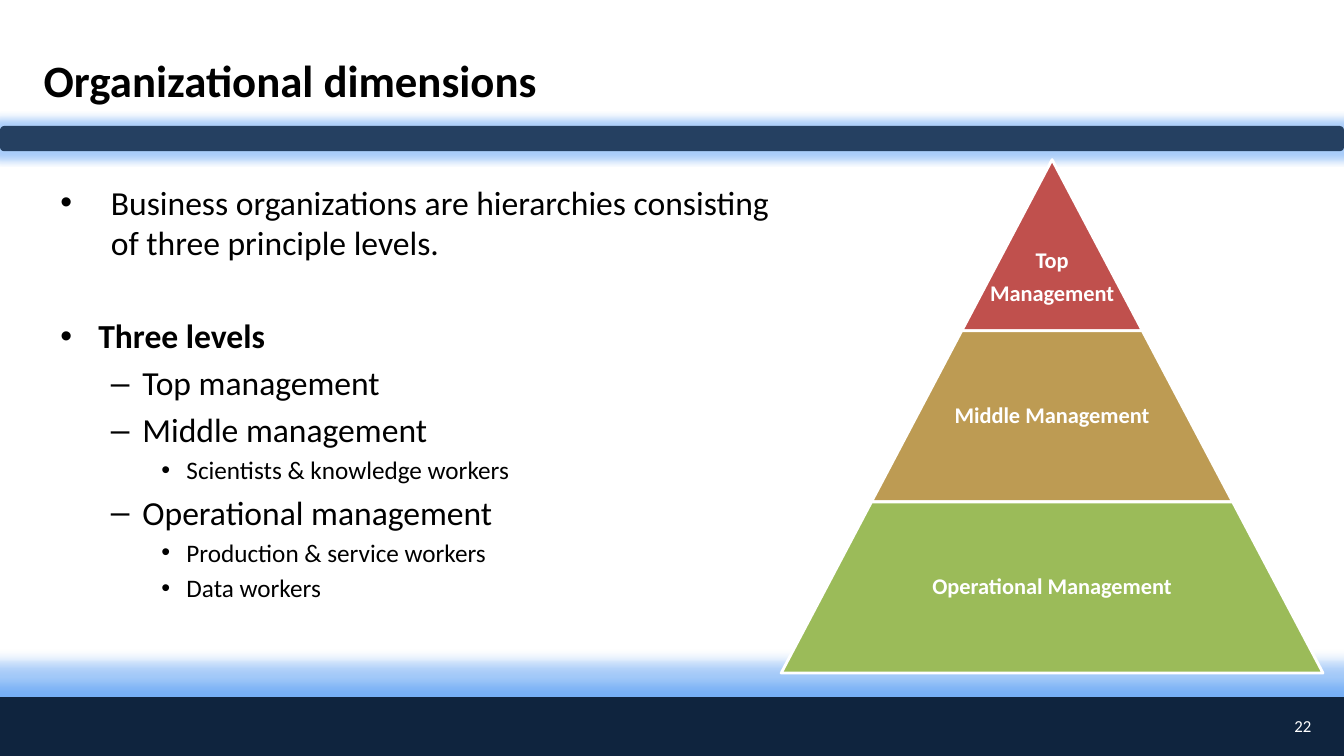
from lxml import etree
from pptx import Presentation
from pptx.dml.color import RGBColor
from pptx.enum.shapes import MSO_SHAPE
from pptx.enum.text import MSO_ANCHOR, MSO_AUTO_SIZE, PP_ALIGN
from pptx.oxml.ns import qn
from pptx.util import Pt

RECTANGLE = MSO_SHAPE.RECTANGLE
ROUNDED = MSO_SHAPE.ROUNDED_RECTANGLE
TRAPEZOID = MSO_SHAPE.TRAPEZOID
MIDDLE = MSO_ANCHOR.MIDDLE
LEFT, CENTER, RIGHT = PP_ALIGN.LEFT, PP_ALIGN.CENTER, PP_ALIGN.RIGHT

FONT = "Calibri"
BLACK, WHITE = "000000", "FFFFFF"
GLOW = "2A82F0"

# Level: (left margin px, hanging indent px, size pt)
LEVELS = [(36, 36, 24), (78, 30, 24), (120, 24, 18)]

# (level, text)
OUTLINE = [
    (0, "Business organizations are hierarchies consisting of three principle levels."),
    (0, "Three levels"),
    (1, "Top management"),
    (1, "Middle management"),
    (2, "Scientists & knowledge workers"),
    (1, "Operational management"),
    (2, "Production & service workers"),
    (2, "Data workers"),
]

# (lines, fill, top inset px)
TIERS = [
    (["Top", "Management"], "C0504D", 64),
    (["Middle Management"], "BD9B53", 2),
    (["Operational Management"], "9BBB59", 2),
]
APEX_X, APEX_Y = 1002, 152
TIER_HEIGHT, TIER_STEP = 163, 86


def px(length):
    return length * 9525


def color(value):
    return RGBColor.from_string(value)


def add_span(para, text, size, ink, bold=False):
    span = para.add_run()
    span.text = text
    span.font.name = FONT
    span.font.size = Pt(size)
    span.font.bold = bold
    span.font.color.rgb = color(ink)


def place(box, left, top, width, height):
    box.left, box.top = px(left), px(top)
    box.width, box.height = px(width), px(height)


def add_block(page, kind, left, top, width, height, fill):
    block = page.shapes.add_shape(kind, px(left), px(top), px(width), px(height))
    block.shadow.inherit = False
    block.fill.solid()
    block.fill.fore_color.rgb = color(fill)
    block.line.fill.background()
    return block


def add_glowing_bar(page, kind, top, height, fill, radius):
    bar = add_block(page, kind, 0, top, 1280, height, fill)
    effects = bar._element.spPr.find(qn("a:effectLst"))
    glow = etree.SubElement(effects, qn("a:glow"), rad=str(Pt(radius)))
    tint = etree.SubElement(glow, qn("a:srgbClr"), val=GLOW)
    etree.SubElement(tint, qn("a:alpha"), val="40000")


def add_label(page, left, top, width, height, lines, size, align, bold=False, inset=2):
    box = page.shapes.add_textbox(px(left), px(top), px(width), px(height))
    frame = box.text_frame
    frame.word_wrap = True
    frame.vertical_anchor = MIDDLE
    frame.margin_left = frame.margin_right = frame.margin_bottom = px(2)
    frame.margin_top = px(inset)
    for index, line in enumerate(lines):
        para = frame.add_paragraph() if index else frame.paragraphs[0]
        para.alignment = align
        para.line_spacing = 0.9
        if index:
            para.space_before = Pt(5.6)
        add_span(para, line, size, WHITE, bold)


def add_title(page, text):
    title = page.shapes.title
    place(title, 32, 40, 1110, 72)
    title.text_frame.vertical_anchor = MIDDLE
    para = title.text_frame.paragraphs[0]
    para.alignment = LEFT
    add_span(para, text, 32, BLACK, True)


def add_outline(page):
    body = page.placeholders[1]
    place(body, 48, 168, 704, 472)
    frame = body.text_frame
    frame.auto_size = MSO_AUTO_SIZE.NONE
    for index, (level, text) in enumerate(OUTLINE):
        para = frame.add_paragraph() if index else frame.paragraphs[0]
        para.level = level
        margin, hanging, size = LEVELS[level]
        # The opening statement hangs deeper than the list heading
        if index == 0:
            margin = hanging = 48
        properties = para._p.get_or_add_pPr()
        properties.set("marL", str(px(margin)))
        properties.set("indent", str(-px(hanging)))
        heading = text == "Three levels"
        if heading:
            para.space_before = Pt(38)
        add_span(para, text, size, BLACK, heading)


def add_pyramid(page):
    for index, (lines, fill, inset) in enumerate(TIERS):
        half = TIER_STEP * (index + 1)
        area = (APEX_X - half, APEX_Y + TIER_HEIGHT * index, 2 * half, TIER_HEIGHT)
        tier = add_block(page, TRAPEZOID, *area, fill)
        tier.adjustments[0] = TIER_STEP / TIER_HEIGHT
        tier.line.color.rgb = color(WHITE)
        tier.line.width = Pt(2)
        add_label(page, *area, lines, 16, CENTER, True, inset)


def main():
    deck = Presentation()
    deck.slide_width, deck.slide_height = px(1280), px(720)
    page = deck.slides.add_slide(deck.slide_layouts[1])

    # Footer and header bars
    add_glowing_bar(page, RECTANGLE, 664, 56, "0F243E", 18)
    add_glowing_bar(page, ROUNDED, 120, 24, "254061", 11)

    # Content
    add_title(page, "Organizational dimensions")
    add_outline(page)
    add_pyramid(page)

    # Page number
    add_label(page, 1206, 672, 45, 40, ["22"], 12, RIGHT)

    deck.save("out.pptx")


if __name__ == "__main__":
    main()
